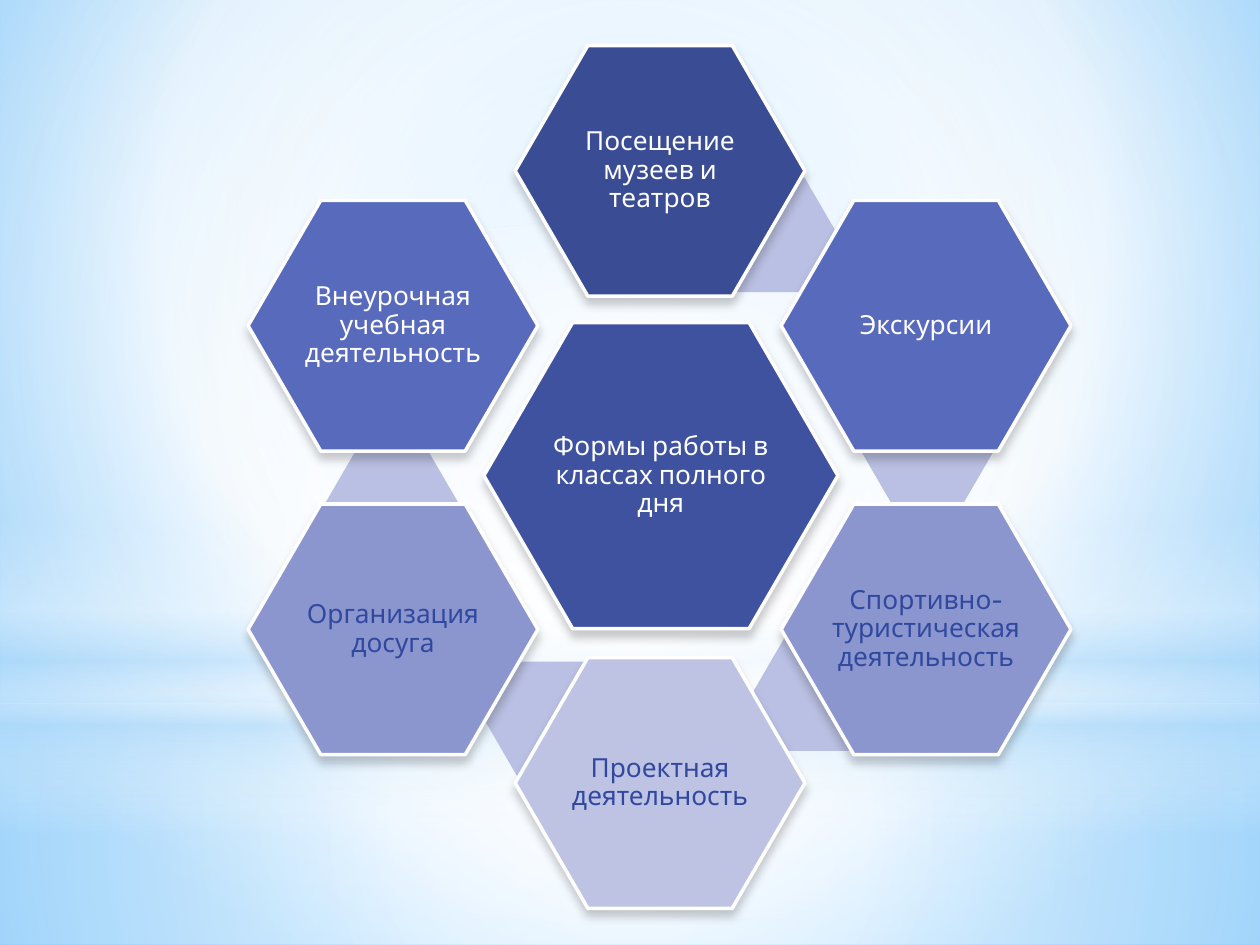
from lxml import etree
from pptx import Presentation
from pptx.dml.color import RGBColor
from pptx.enum import shapes, text
from pptx.oxml.ns import qn
from pptx.util import Pt

FONT = "Cabin"
WHITE, NAVY, LILAC = "FFFFFF", "31489F", "BAC0E3"
SKY = "B4DCFA"
PETAL_SIZE = (165.6, 143.3)
LINK_SIZE = (76.3, 65.5)
LEFT, MIDDLE, RIGHT = 141.8, 294.4, 446.4
CENTER = (276.5, 184.3, 202.3, 175)

# label, left, top, fill, text colour, corner of the link drawn behind it
PETALS = [
    ("Посещение музеев и театров", MIDDLE, 26, "3A4C94", WHITE, (402.5, 101.5)),
    ("Экскурсии", RIGHT, 114.5, "586ABC", WHITE, (491.8, 224.6)),
    ("Спортивно-туристическая деятельность", RIGHT, 288, "8B96CF", NAVY,
     (429.8, 363.6)),
    ("Проектная деятельность", MIDDLE, 375.8, "BEC3E4", NAVY, (276.5, 378)),
    ("Организация досуга", LEFT, 288, "8B96CF", NAVY, (185.8, 254.9)),
    ("Внеурочная учебная деятельность", LEFT, 114.5, "586ABC", WHITE, None),
]


def rgb(value):
    return RGBColor.from_string(value)


def add_color(parent, value, opacity):
    color = etree.SubElement(parent, qn("a:srgbClr"), val=value)
    if opacity < 100:
        etree.SubElement(color, qn("a:alpha"), val=str(opacity * 1000))


def set_gradient(owner, stops, focus=None):
    """Fill with (position, colour, opacity) stops: round a focus, or downwards."""
    owner.fill.gradient()
    gradient = owner_element(owner).find(".//" + qn("a:gradFill"))
    for child in list(gradient):
        gradient.remove(child)
    stop_list = etree.SubElement(gradient, qn("a:gsLst"))
    for position, color, opacity in stops:
        stop = etree.SubElement(stop_list, qn("a:gs"), pos=str(position * 1000))
        add_color(stop, color, opacity)
    if focus is None:
        etree.SubElement(gradient, qn("a:lin"), ang="5400000", scaled="0")
        return
    circle = etree.SubElement(gradient, qn("a:path"))
    circle.set("path", "circle")
    edges = {side: str(share * 1000) for side, share in zip("ltrb", focus)}
    etree.SubElement(circle, qn("a:fillToRect"), **edges)


def owner_element(owner):
    """Shapes and backgrounds both expose their XML element this way."""
    return owner._element


def add_plain_shape(slide, kind, left, top, width, height):
    shape = slide.shapes.add_shape(kind, Pt(left), Pt(top), Pt(width), Pt(height))
    shape.shadow.inherit = False
    shape.line.fill.background()
    return shape


def add_glow(slide, kind, top, height, stops, focus=None):
    """Full-width translucent layer of the backdrop."""
    glow = add_plain_shape(slide, kind, 0, top, 720, height)
    set_gradient(glow, stops, focus)


def add_backdrop(slide):
    set_gradient(slide.background,
                 [(0, "9ED5FF", 100), (60, WHITE, 100), (100, "5BB9FF", 100)],
                 (20, 10, 20, 60))
    rectangle = shapes.MSO_SHAPE.RECTANGLE
    middle = (50, 50, 50, 50)
    add_glow(slide, rectangle, 401.8, 138.2,
             [(0, WHITE, 91), (37, WHITE, 76), (100, SKY, 79)], middle)
    add_glow(slide, rectangle, 0, 401.8,
             [(0, WHITE, 89), (48, WHITE, 62), (100, SKY, 79)], middle)
    add_glow(slide, rectangle, 296.6, 180,
             [(0, WHITE, 0), (29, WHITE, 30), (45, SKY, 40),
              (55, WHITE, 26), (65, SKY, 60), (100, WHITE, 0)])
    add_glow(slide, shapes.MSO_SHAPE.OVAL, 126, 401.8,
             [(0, WHITE, 100), (56, WHITE, 0)], middle)


def add_hexagon(slide, left, top, width, height, fill):
    hexagon = add_plain_shape(slide, shapes.MSO_SHAPE.HEXAGON,
                              left, top, width, height)
    hexagon.adjustments[0] = 0.29
    hexagon.fill.solid()
    hexagon.fill.fore_color.rgb = rgb(fill)
    return hexagon


def add_drop_shadow(shape):
    effects = shape.element.spPr.find(qn("a:effectLst"))
    shadow = etree.SubElement(effects, qn("a:outerShdw"), blurRad=str(Pt(5)),
                              dist=str(Pt(4)), dir="5400000", rotWithShape="0")
    add_color(shadow, "000000", 20)


def add_topic(slide, label, left, top, width, height, fill, color):
    """Outlined hexagon that carries its label."""
    topic = add_hexagon(slide, left, top, width, height, fill)
    topic.line.color.rgb = rgb(WHITE)
    topic.line.width = Pt(2)
    add_drop_shadow(topic)
    frame = topic.text_frame
    frame.word_wrap = True
    frame.vertical_anchor = text.MSO_ANCHOR.MIDDLE
    # No side margins: the longest word needs the full width
    frame.margin_left = frame.margin_right = Pt(0)
    frame.margin_top = frame.margin_bottom = Pt(1.5)
    paragraph = frame.paragraphs[0]
    paragraph.text = label
    paragraph.alignment = text.PP_ALIGN.CENTER
    paragraph.line_spacing = 0.9
    paragraph.font.name = FONT
    paragraph.font.size = Pt(15)
    paragraph.font.color.rgb = rgb(color)


def main():
    deck = Presentation()
    deck.slide_width, deck.slide_height = Pt(720), Pt(540)
    slide = deck.slides.add_slide(deck.slide_layouts[6])
    add_backdrop(slide)
    add_topic(slide, "Формы работы в классах полного дня", *CENTER,
              "3E52A0", WHITE)
    for label, left, top, fill, color, link in PETALS:
        if link:
            add_hexagon(slide, *link, *LINK_SIZE, LILAC)
        add_topic(slide, label, left, top, *PETAL_SIZE, fill, color)
    deck.save("out.pptx")


if __name__ == "__main__":
    main()
